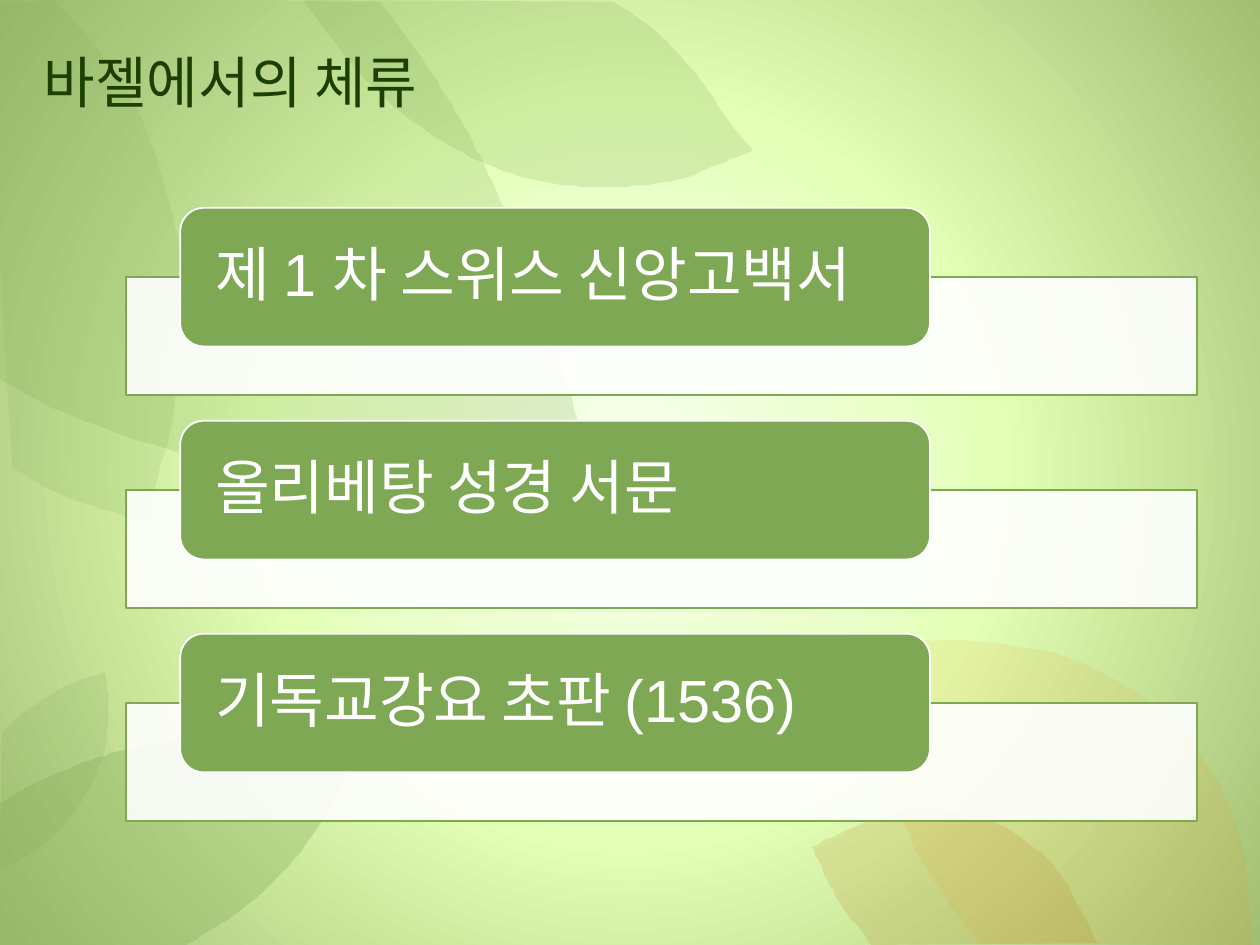
from lxml import etree
from pptx import Presentation
from pptx.dml.color import RGBColor
from pptx.enum import shapes, text
from pptx.oxml import ns
from pptx.util import Pt

GREEN = RGBColor(0x7F, 0xA8, 0x54)
DARK_GREEN = RGBColor(0x1C, 0x40, 0x01)
WHITE = RGBColor(0xFF, 0xFF, 0xFF)
ORANGE = RGBColor(0xFD, 0x8A, 0x03)
BROWN = RGBColor(0xBE, 0x68, 0x02)
GLOW = [(0, RGBColor(0xF8, 0xFF, 0xEE)), (33, RGBColor(0xEA, 0xFF, 0xC9)),
        (47, RGBColor(0xE2, 0xFF, 0xB5)), (100, RGBColor(0xA2, 0xBE, 0x73))]
GLOW_CENTER = dict(l=20, t=30, r=20, b=30)

KOREAN, LATIN = "Noto Sans CJK KR", "Arial"
TITLE = "바젤에서의 체류"
ITEMS = ["제 1 차 스위스 신앙고백서", "올리베탕 성경 서문", "기독교강요 초판 (1536)"]

LEAVES = [
    (ORANGE, 10, 0, [
        [(505, 366), (564, 367), (619, 379), (664, 408), (693, 442), (710, 484), (716, 540)],
        [(559, 539), (526, 491), (512, 451), (505, 408), (505, 366)]]),
    (BROWN, 15, 0, [
        [(464, 484), (492, 471), (514, 464), (534, 463), (564, 468), (588, 482),
         (607, 501), (627, 539)],
        [(498, 540), (482, 519), (473, 503), (464, 484)]]),
    (GREEN, 15, -3.4, [
        [(0, 264), (0, 0)],
        [(40, -1), (57, 20), (72, 42), (84, 65), (93, 93), (99, 120), (103, 146),
         (103, 174), (98, 216), (91, 250), (74, 300)],
        [(74, 300), (53, 292), (31, 283), (14, 274), (0, 264)]]),
    (GREEN, 20, 0, [
        [(338, 277), (275, 281), (218, 279), (162, 272), (114, 262), (63, 246),
         (24, 230), (0, 216)],
        [(-1, -1), (217, 1)],
        [(217, 1), (238, 29), (255, 55), (270, 81), (284, 110), (298, 142),
         (310, 173), (320, 206), (330, 240), (338, 277)]]),
    (GREEN, 20, 0, [
        [(350, 1), (370, 14), (387, 30), (403, 49), (417, 70), (430, 86)],
        [(430, 86), (410, 94), (390, 102), (366, 106), (338, 107), (307, 103),
         (279, 94), (250, 79), (221, 57), (198, 33), (173, 0)]]),
    (GREEN, 17, 0, [
        [(60, 384), (62, 405), (59, 432), (50, 452), (40, 467), (27, 481), (14, 490), (0, 497)],
        [(1, 419), (12, 408), (24, 400), (40, 391), (60, 384)]]),
    (GREEN, 30, 0, [
        [(105, 541), (0, 540)],
        [(0, 459), (19, 448), (42, 438), (69, 429), (99, 423), (131, 421), (166, 423), (204, 430)],
        [(204, 430), (194, 451), (178, 478), (157, 503), (131, 525), (105, 541)]]),
]

ROW_TOP, ROW_STEP = 118.8, 121.68
BAR = dict(left=72, drop=39.6, width=612, height=67.5)
LABEL = dict(left=103, width=428.4, height=79.2)
STEPS = 6


def smooth(edge):
    pts = [edge[0], *edge, edge[-1]]
    for a, b, c, d in zip(pts, pts[1:], pts[2:], pts[3:]):
        for t in (i / STEPS for i in range(STEPS)):
            yield tuple(0.5 * (2 * q + (r - p) * t + (2 * p - 5 * q + 4 * r - w) * t ** 2
                               + (3 * q - p - 3 * r + w) * t ** 3)
                        for p, q, r, w in zip(a, b, c, d))
    yield edge[-1]


def paint(sp, color, alpha=100, line=None):
    sp.shadow.inherit = False
    sp.fill.solid()
    sp.fill.fore_color.rgb = color
    if alpha < 100:
        clr = sp.fill._xPr.find(".//" + ns.qn("a:srgbClr"))
        etree.SubElement(clr, ns.qn("a:alpha"), val=str(alpha * 1000))
    if line is None:
        sp.line.fill.background()
    else:
        sp.line.color.rgb = line
        sp.line.width = Pt(1)


def write(sp, words, size, color, font, inset, **para):
    tf = sp.text_frame
    frame = dict(word_wrap=True, vertical_anchor=text.MSO_ANCHOR.MIDDLE,
                 margin_left=Pt(inset[0]), margin_right=Pt(inset[0]),
                 margin_top=Pt(inset[1]), margin_bottom=Pt(inset[1]))
    for key, value in frame.items():
        setattr(tf, key, value)
    p = tf.paragraphs[0]
    for key, value in dict(alignment=text.PP_ALIGN.LEFT, **para).items():
        setattr(p, key, value)
    r = p.add_run()
    r.text = words
    r.font.size, r.font.name = Pt(size), font
    r.font.color.rgb = color
    etree.SubElement(r.font._element, ns.qn("a:ea"), typeface=KOREAN)


def add_background(s):
    s.background.fill.gradient()
    grad = s.element.find(".//" + ns.qn("a:gradFill"))
    for child in list(grad):
        grad.remove(child)
    stops = etree.SubElement(grad, ns.qn("a:gsLst"))
    for pos, color in GLOW:
        gs = etree.SubElement(stops, ns.qn("a:gs"), pos=str(pos * 1000))
        etree.SubElement(gs, ns.qn("a:srgbClr"), val=str(color))
    route = etree.SubElement(grad, ns.qn("a:path"), {"path": "circle"})
    etree.SubElement(route, ns.qn("a:fillToRect"),
                     {side: str(v * 1000) for side, v in GLOW_CENTER.items()})


def add_leaf(s, color, alpha, angle, edges):
    pts = [pt for edge in edges for pt in smooth(edge)]
    fb = s.shapes.build_freeform(*pts[0], scale=Pt(1))
    fb.add_line_segments(pts[1:], close=True)
    sp = fb.convert_to_shape()
    sp.rotation = angle
    paint(sp, color, alpha)


def add_row(s, i, words):
    top = ROW_TOP + i * ROW_STEP
    bar = s.shapes.add_shape(shapes.MSO_SHAPE.RECTANGLE, Pt(BAR["left"]), Pt(top + BAR["drop"]),
                             Pt(BAR["width"]), Pt(BAR["height"]))
    paint(bar, WHITE, 90, GREEN)
    label = s.shapes.add_shape(shapes.MSO_SHAPE.ROUNDED_RECTANGLE, Pt(LABEL["left"]), Pt(top),
                               Pt(LABEL["width"]), Pt(LABEL["height"]))
    label.adjustments[0] = 0.17
    paint(label, GREEN, line=WHITE)
    write(label, words, 34, WHITE, LATIN, (16, 0), line_spacing=0.9, space_after=Pt(12))


def main():
    prs = Presentation()
    prs.slide_width, prs.slide_height = Pt(720), Pt(540)
    s = prs.slides.add_slide(prs.slide_layouts[6])
    add_background(s)
    for leaf in LEAVES:
        add_leaf(s, *leaf)
    title = s.shapes.add_textbox(Pt(18), Pt(13.7), Pt(683.3), Pt(65.5))
    write(title, TITLE, 32, DARK_GREEN, KOREAN, (7.2, 3.6))
    for i, words in enumerate(ITEMS):
        add_row(s, i, words)
    prs.save("out.pptx")


if __name__ == "__main__":
    main()
